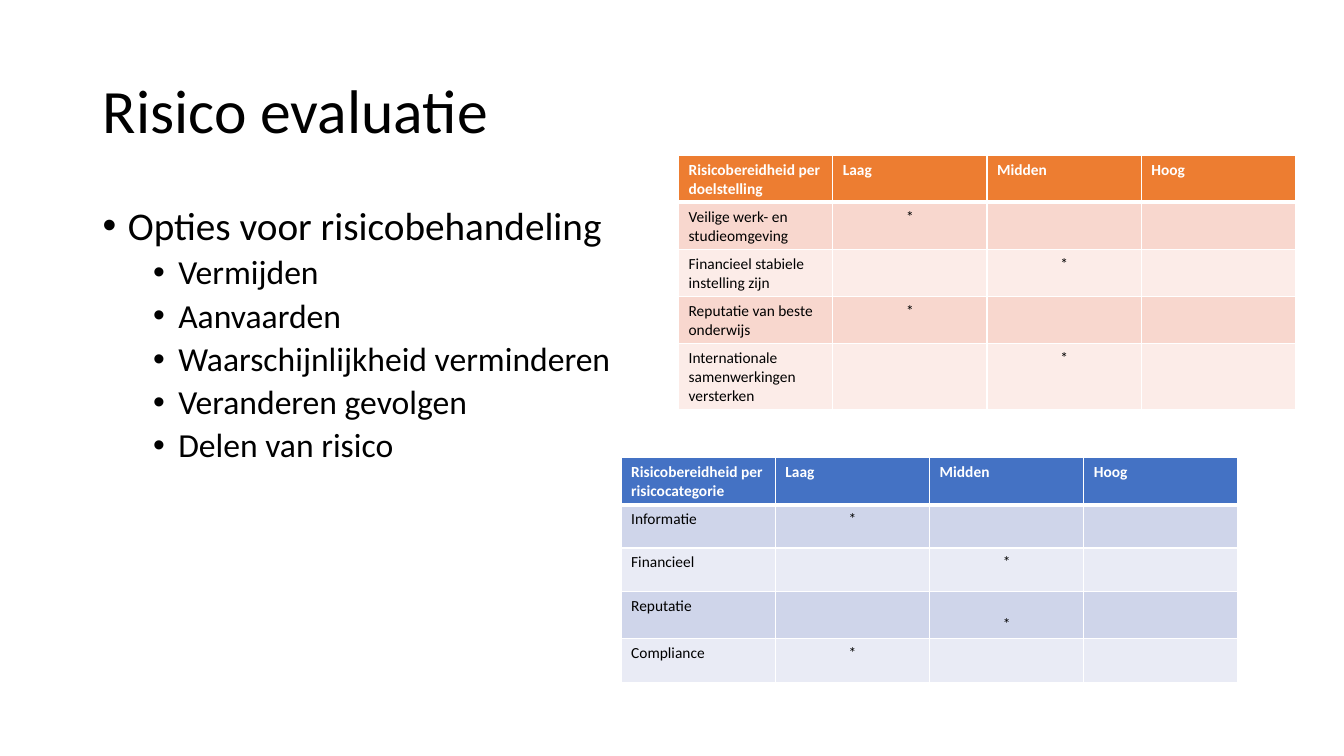
from dataclasses import dataclass
from typing import Optional

from lxml.etree import SubElement
from pptx import Presentation
from pptx.dml.color import RGBColor
from pptx.enum.text import MSO_ANCHOR, MSO_AUTO_SIZE, PP_ALIGN
from pptx.oxml.ns import qn
from pptx.util import Inches, Pt


@dataclass(frozen=True)
class Theme:
    font: str = "Calibri"
    black: str = "000000"
    white: str = "FFFFFF"
    title_size: int = 44
    body_size: int = 28
    option_size: int = 24
    table_size: int = 11
    thin_border: float = 1
    header_border: float = 3


@dataclass(frozen=True)
class Palette:
    header: str
    odd: str
    even: str


@dataclass(frozen=True)
class RiskRow:
    label: str
    level: str
    height: float = 0.43
    anchor: MSO_ANCHOR = MSO_ANCHOR.TOP


@dataclass(frozen=True)
class RiskTable:
    heading: str
    left: float
    top: float
    palette: Palette
    rows: tuple[RiskRow, ...]


THEME = Theme()
LEVELS = ("Laag", "Midden", "Hoog")
COLUMN_WIDTH = 1.53
HEADER_HEIGHT = 0.46
OPTIONS = (
    "Vermijden",
    "Aanvaarden",
    "Waarschijnlijkheid verminderen",
    "Veranderen gevolgen",
    "Delen van risico",
)
RISK_TABLES = (
    RiskTable(
        "Risicobereidheid per risicocategorie", 6.16, 4.54,
        Palette("4472C4", "CFD5EA", "E9EBF5"),
        (
            RiskRow("Informatie", "Laag"),
            RiskRow("Financieel", "Midden"),
            RiskRow("Reputatie", "Midden", 0.47, MSO_ANCHOR.BOTTOM),
            RiskRow("Compliance", "Laag"),
        ),
    ),
    RiskTable(
        "Risicobereidheid per doelstelling", 6.73, 1.54,
        Palette("ED7D31", "F8D7CE", "FCECE8"),
        (
            RiskRow("Veilige werk- en studieomgeving", "Laag"),
            RiskRow("Financieel stabiele instelling zijn", "Midden"),
            RiskRow("Reputatie van beste onderwijs", "Laag"),
            RiskRow("Internationale samenwerkingen versterken", "Midden"),
        ),
    ),
)


def write_text(paragraph, text: str, *, size: int, color: str = THEME.black,
               bold: bool = False, align: PP_ALIGN = PP_ALIGN.LEFT,
               line_spacing: Optional[float] = None, space_before: float = 0) -> None:
    paragraph.alignment = align
    paragraph.space_before = Pt(space_before)
    if line_spacing is not None:
        paragraph.line_spacing = line_spacing
    run = paragraph.add_run()
    run.text = text
    run.font.name = THEME.font
    run.font.size = Pt(size)
    run.font.bold = bold
    run.font.color.rgb = RGBColor.from_string(color)


def add_bullet(paragraph, indent: float) -> None:
    properties = paragraph._p.get_or_add_pPr()
    properties.set("marL", str(Inches(indent)))
    properties.set("indent", str(Inches(-0.25)))
    SubElement(properties, qn("a:buFont"), typeface="Arial")
    SubElement(properties, qn("a:buChar"), char="•")


def format_title(title) -> None:
    title.left, title.top = Inches(0.92), Inches(0.4)
    title.width, title.height = Inches(11.5), Inches(1.45)
    frame = title.text_frame
    frame.auto_size = MSO_AUTO_SIZE.NONE
    frame.vertical_anchor = MSO_ANCHOR.MIDDLE
    write_text(frame.paragraphs[0], "Risico evaluatie", size=THEME.title_size,
               line_spacing=0.9)


def add_options(slide) -> None:
    box = slide.shapes.add_textbox(Inches(0.92), Inches(2), Inches(11.5), Inches(4.76))
    frame = box.text_frame
    frame.word_wrap = True
    heading = frame.paragraphs[0]
    write_text(heading, "Opties voor risicobehandeling", size=THEME.body_size,
               line_spacing=0.9, space_before=10)
    add_bullet(heading, 0.25)
    for option in OPTIONS:
        paragraph = frame.add_paragraph()
        paragraph.level = 1
        write_text(paragraph, option, size=THEME.option_size,
                   line_spacing=0.9, space_before=5)
        add_bullet(paragraph, 0.75)


def format_cell(cell, fill: str, top: float, bottom: float) -> None:
    """Give the cell white borders, with top and bottom in points, and a fill."""
    properties = cell._tc.get_or_add_tcPr()
    widths = {"lnL": THEME.thin_border, "lnR": THEME.thin_border,
              "lnT": top, "lnB": bottom}
    for side, width in widths.items():
        line = SubElement(properties, qn(f"a:{side}"), w=str(Pt(width)))
        line_fill = SubElement(line, qn("a:solidFill"))
        SubElement(line_fill, qn("a:srgbClr"), val=THEME.white)
    cell.fill.solid()
    cell.fill.fore_color.rgb = RGBColor.from_string(fill)


def add_risk_table(slide, risk_table: RiskTable) -> None:
    headings = (risk_table.heading, *LEVELS)
    heights = (HEADER_HEIGHT, *(row.height for row in risk_table.rows))
    table = slide.shapes.add_table(
        len(heights), len(headings), Inches(risk_table.left), Inches(risk_table.top),
        Inches(COLUMN_WIDTH * len(headings)), Inches(sum(heights)),
    ).table
    for column in table.columns:
        column.width = Inches(COLUMN_WIDTH)
    for table_row, height in zip(table.rows, heights):
        table_row.height = Inches(height)

    palette = risk_table.palette
    for column, heading in enumerate(headings):
        cell = table.cell(0, column)
        format_cell(cell, palette.header, THEME.thin_border, THEME.header_border)
        write_text(cell.text_frame.paragraphs[0], heading, size=THEME.table_size,
                   color=THEME.white, bold=True)

    for index, row in enumerate(risk_table.rows, start=1):
        fill = palette.odd if index % 2 else palette.even
        top = THEME.header_border if index == 1 else THEME.thin_border
        for column in range(len(headings)):
            format_cell(table.cell(index, column), fill, top, THEME.thin_border)
        write_text(table.cell(index, 0).text_frame.paragraphs[0], row.label,
                   size=THEME.table_size)
        mark = table.cell(index, headings.index(row.level))
        mark.vertical_anchor = row.anchor
        write_text(mark.text_frame.paragraphs[0], "*", size=THEME.table_size,
                   align=PP_ALIGN.CENTER)


def main() -> None:
    presentation = Presentation()
    presentation.slide_width = Inches(13.33)
    presentation.slide_height = Inches(7.5)
    slide = presentation.slides.add_slide(presentation.slide_layouts.get_by_name("Title Only"))
    format_title(slide.shapes.title)
    add_options(slide)
    for risk_table in RISK_TABLES:
        add_risk_table(slide, risk_table)
    presentation.save("out.pptx")


if __name__ == "__main__":
    main()
